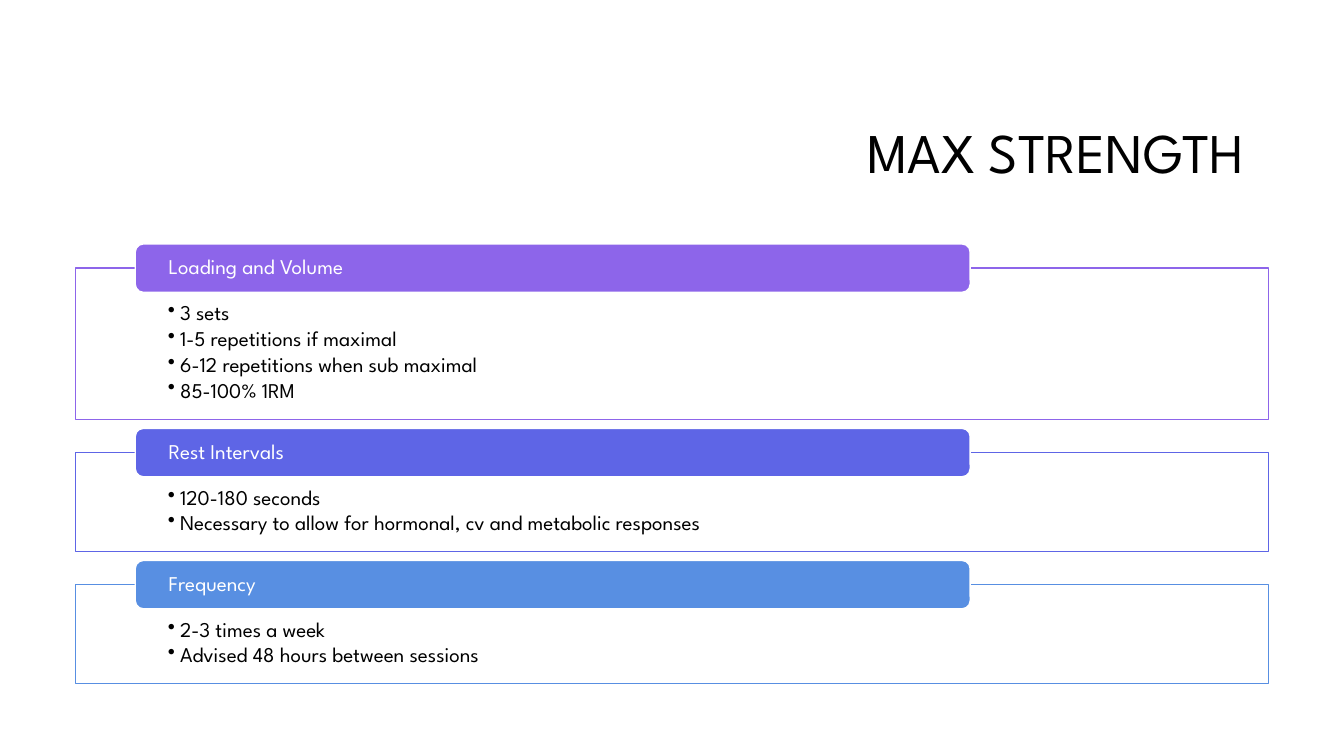
from dataclasses import dataclass

from lxml.etree import SubElement
from pptx import Presentation
from pptx.dml.color import RGBColor
from pptx.enum.shapes import MSO_SHAPE
from pptx.enum.text import MSO_ANCHOR, MSO_AUTO_SIZE, PP_ALIGN
from pptx.oxml.ns import qn
from pptx.util import Inches, Pt


@dataclass(frozen=True)
class Theme:
    font: str = "League Spartan"
    ink: str = "000000"
    paper: str = "FFFFFF"
    accents: tuple = ("8D65EA", "5E65E6", "588FE2")
    title_size: int = 40
    text_size: int = 15
    line_width: int = 1
    line_spacing: float = 0.9
    bullet_gap: float = 2.25
    panel_opacity: int = 90


def apply(target, values):
    for name, value in values.items():
        setattr(target, name, value)


class SlideBuilder:
    """Places elements on a grid of 160 columns by 150 rows."""

    COLUMNS, ROWS = 160, 150

    def __init__(self, deck, theme):
        self.theme = theme
        self.slide = deck.slides.add_slide(deck.slide_layouts[5])
        self.column = deck.slide_width / self.COLUMNS
        self.row = deck.slide_height / self.ROWS

    def across(self, columns):
        return round(columns * self.column)

    def down(self, rows):
        return round(rows * self.row)

    def box(self, left, top, width, height):
        return (self.across(left), self.down(top),
                self.across(width), self.down(height))

    def set_text(self, frame, lines, size, color, frame_format, line_format):
        apply(frame, {"word_wrap": True, "auto_size": MSO_AUTO_SIZE.NONE,
                      **frame_format})
        for index, line in enumerate(lines):
            paragraph = frame.paragraphs[0] if index == 0 else frame.add_paragraph()
            paragraph.text = line
            apply(paragraph, {"line_spacing": self.theme.line_spacing,
                              "space_before": Pt(0), **line_format})
            apply(paragraph.font, {"name": self.theme.font, "size": Pt(size)})
            paragraph.font.color.rgb = RGBColor.from_string(color)

    def title(self, text, *place):
        heading = self.slide.shapes.title
        apply(heading, dict(zip(("left", "top", "width", "height"),
                                self.box(*place))))
        self.set_text(heading.text_frame, [text], self.theme.title_size,
                      self.theme.ink, {"vertical_anchor": MSO_ANCHOR.MIDDLE},
                      {"alignment": PP_ALIGN.RIGHT})

    def block(self, kind, place, fill, line):
        block = self.slide.shapes.add_shape(kind, *self.box(*place))
        block.shadow.inherit = False
        block.fill.solid()
        block.fill.fore_color.rgb = RGBColor.from_string(fill)
        block.line.color.rgb = RGBColor.from_string(line)
        block.line.width = Pt(self.theme.line_width)
        return block

    def panel(self, bullets, accent, *place):
        panel = self.block(MSO_SHAPE.RECTANGLE, place, self.theme.paper, accent)
        color = panel.fill._xPr.find(qn("a:solidFill"))[0]
        SubElement(color, qn("a:alpha"), val=str(self.theme.panel_opacity * 1000))
        self.set_text(panel.text_frame, bullets, self.theme.text_size, self.theme.ink,
                      {"margin_left": self.across(11), "margin_right": self.across(11),
                       "margin_top": self.down(6.8), "margin_bottom": self.down(2.4),
                       "vertical_anchor": MSO_ANCHOR.TOP},
                      {"alignment": PP_ALIGN.LEFT,
                       "space_after": Pt(self.theme.bullet_gap)})
        hang = self.across(1.44)
        for paragraph in panel.text_frame.paragraphs:
            properties = paragraph._p.get_or_add_pPr()
            properties.set("marL", str(hang))
            properties.set("indent", str(-hang))
            bullet = properties.makeelement(qn("a:buChar"), {"char": "•"})
            properties.find(qn("a:defRPr")).addprevious(bullet)

    def tab(self, label, accent, *place):
        tab = self.block(MSO_SHAPE.ROUNDED_RECTANGLE, place, accent, self.theme.paper)
        self.set_text(tab.text_frame, [label], self.theme.text_size, self.theme.paper,
                      {"margin_left": self.across(3.7), "margin_right": self.across(3.7),
                       "margin_top": 0, "margin_bottom": 0,
                       "vertical_anchor": MSO_ANCHOR.MIDDLE},
                      {"alignment": PP_ALIGN.LEFT})


SECTIONS = [
    ("Loading and Volume", ["3 sets", "1-5 repetitions if maximal",
                            "6-12 repetitions when sub maximal", "85-100% 1RM"]),
    ("Rest Intervals", ["120-180 seconds",
                        "Necessary to allow for hormonal, cv and metabolic responses"]),
    ("Frequency", ["2-3 times a week", "Advised 48 hours between sessions"]),
]


def main():
    deck = Presentation()
    apply(deck, {"slide_width": Inches(13.333), "slide_height": Inches(7.5)})
    theme = Theme()
    builder = SlideBuilder(deck, theme)

    # Heading
    builder.title("MAX STRENGTH ", 38, 16.8, 113, 28.2)

    # Sections: each panel grows with its bullets, its tab straddles the top edge
    top, gap, tab_height = 53.2, 6.6, 9.6
    for (label, bullets), accent in zip(SECTIONS, theme.accents):
        height = 9.2 + 5.2 * len(bullets)
        builder.panel(bullets, accent, 9, top, 142, height)
        builder.tab(label, accent, 16.1, top - tab_height / 2, 99.4, tab_height)
        top += height + gap

    deck.save("out.pptx")


if __name__ == "__main__":
    main()
